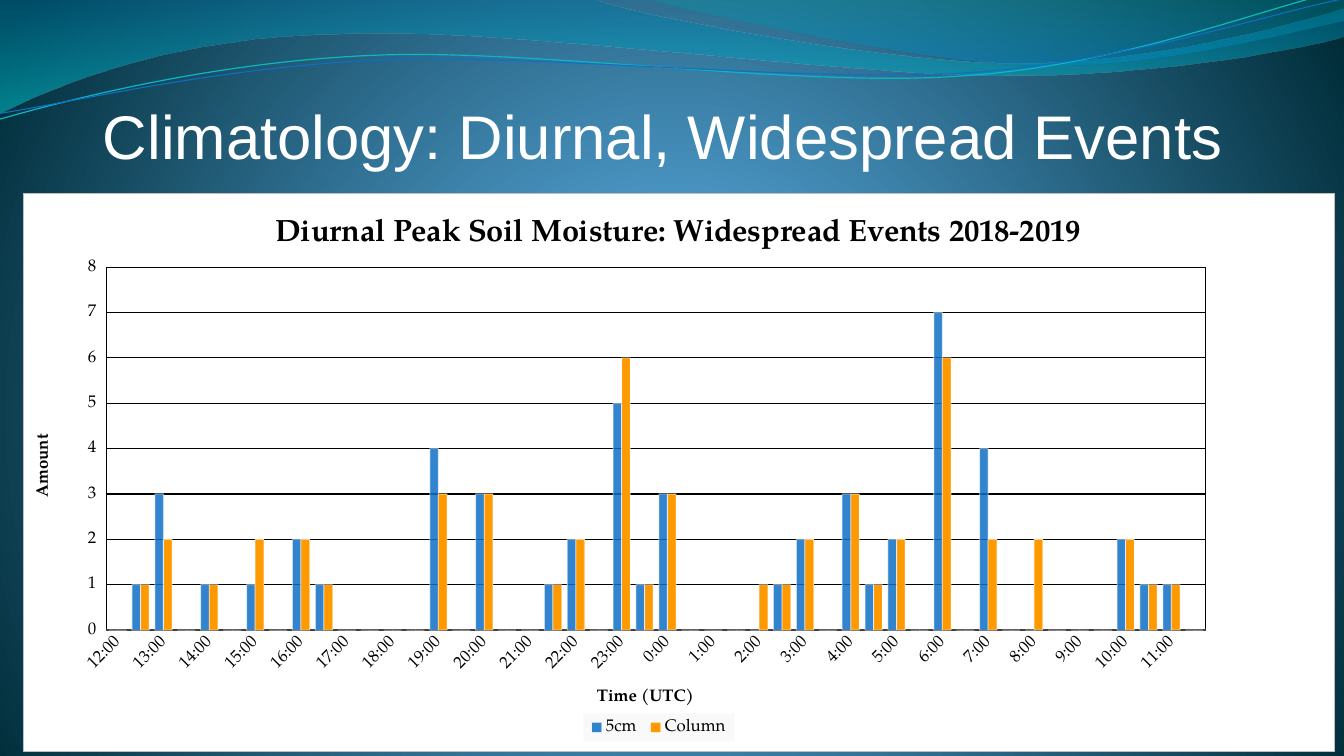
from dataclasses import dataclass
from typing import Optional

from lxml.etree import SubElement
from pptx import Presentation
from pptx.chart.data import CategoryChartData
from pptx.dml.color import RGBColor
from pptx.enum.chart import XL_CHART_TYPE as ChartType, XL_LEGEND_POSITION as LegendPosition
from pptx.enum.chart import XL_TICK_MARK as TickMark
from pptx.enum.text import MSO_ANCHOR as Anchor, PP_ALIGN as Align
from pptx.oxml import parse_xml
from pptx.oxml.ns import nsdecls, qn
from pptx.util import Inches, Pt


@dataclass(frozen=True)
class Theme:
    heading_font: str = "Arial"
    chart_font: str = "TeX Gyre Pagella"
    white: str = "FFFFFF"
    black: str = "000000"
    axis: str = "404040"
    border: str = "BFBFBF"
    legend: str = "F9F9F9"
    heading_size: float = 44
    chart_title_size: float = 22
    label_size: float = 12
    background: tuple = ((0, "4AA0D6", 100), (25, "4C98C7", 100), (100, "002C38", 100))


@dataclass(frozen=True)
class Wave:
    frame: tuple
    start: tuple
    segments: tuple
    gradient: Optional[tuple] = None
    line: Optional[str] = None
    width: float = 0


@dataclass(frozen=True)
class Series:
    name: str
    values: tuple
    color: str
    opacity: int


THEME = Theme()
WAVES = (
    Wave((-0.01, -0.01, 13.36, 1.14), (0, 0),
         ((5.87, -0.01), (6.34, 0.17, 8.85, 0.63, 10.11, 0.63),
          (11.38, 0.63, 12.78, 0.26, 13.33, 0.09), (13.35, 0.36),
          (13.11, 0.44, 11.6, 0.76, 9.94, 0.75), (8.29, 0.75, 5.09, 0.28, 3.43, 0.34),
          (1.72, 0.36, 0.61, 0.83, -0.01, 1.13), (0, 0)),
         gradient=((0, "0074A1", 45), (100, "00C6CF", 55))),
    Wave((6.39, -0.01, 6.94, 0.7), (6.39, -0.01),
         ((6.79, 0.11, 9.09, 0.62, 10.25, 0.65), (11.41, 0.69, 12.82, 0.32, 13.33, 0.21),
          (13.33, 0), (6.39, -0.01)), gradient=((0, "00A1A9", 30), (80, "008BBF", 45))),
    Wave((-0.03, 0.22, 13.36, 0.71), (-0.03, 0.87),
         ((0.61, 0.72, 2.1, 0.4, 3.69, 0.41), (5.27, 0.41, 7.88, 0.93, 9.49, 0.89),
          (11.09, 0.87, 12.54, 0.36, 13.33, 0.22)), line="0AB8BF", width=0.85),
    Wave((-0.02, 0.3, 13.38, 0.58), (-0.02, 0.81),
         ((0.61, 0.75, 2.17, 0.45, 3.77, 0.46), (5.36, 0.47, 7.94, 0.88, 9.54, 0.86),
          (11.14, 0.84, 12.56, 0.42, 13.36, 0.3)), line="0F6FC6", width=0.75),
)
TIMES = [(24 + step) % 48 / 48 for step in range(48)]
SERIES = (
    Series("5cm", (0, 1, 3, 0, 1, 0, 1, 0, 2, 1, 0, 0, 0, 0, 4, 0, 3, 0, 0, 1, 2, 0, 5, 1,
                   3, 0, 0, 0, 0, 1, 2, 0, 3, 1, 2, 0, 7, 0, 4, 0, 0, 0, 0, 0, 2, 1, 1, 0),
           "0F6FC6", 85),
    Series("Column", (0, 1, 2, 0, 1, 0, 2, 0, 2, 1, 0, 0, 0, 0, 3, 0, 3, 0, 0, 1, 2, 0, 6, 1,
                      3, 0, 0, 0, 1, 1, 2, 0, 3, 1, 2, 0, 6, 0, 2, 0, 2, 0, 0, 0, 2, 1, 1, 0),
           "FF9900", 100),
)


def apply_gradient(properties, stops: tuple, direction: str) -> None:
    marks = "".join(f'<a:gs pos="{place * 1000}"><a:srgbClr val="{color}">'
                    f'<a:alpha val="{opacity * 1000}"/></a:srgbClr></a:gs>'
                    for place, color, opacity in stops)
    properties.replace(properties.find(qn("a:solidFill")), parse_xml(
        f'<a:gradFill {nsdecls("a")} rotWithShape="1"><a:gsLst>{marks}</a:gsLst>'
        f'{direction}</a:gradFill>'))


def set_opacity(parent, opacity: int) -> None:
    color = parent.find(f'{qn("a:solidFill")}/{qn("a:srgbClr")}')
    SubElement(color, qn("a:alpha")).set("val", str(opacity * 1000))


def style_line(line, color: str, width: float) -> None:
    line.color.rgb = RGBColor.from_string(color)
    line.width = Pt(width)


def draw_wave(page, wave: Wave) -> None:
    left, top, width, height = (Inches(value) for value in wave.frame)
    builder = page.shapes.build_freeform(*(Inches(value) for value in wave.start))
    builder.add_line_segments([tuple(Inches(v) for v in part[-2:]) for part in wave.segments],
                              close=wave.line is None)
    shape = builder.convert_to_shape()
    shape.left, shape.top, shape.width, shape.height = left, top, width, height
    shape.shadow.inherit = False
    outline = shape._element.spPr.find(f'{qn("a:custGeom")}/{qn("a:pathLst")}')[0]
    outline.set("w", str(width))
    outline.set("h", str(height))
    for command, part in zip(outline, (wave.start, *wave.segments)):
        if len(part) == 6:
            command.tag = qn("a:cubicBezTo")
        for point in list(command):
            command.remove(point)
        for x, y in zip(part[::2], part[1::2]):
            point = SubElement(command, qn("a:pt"))
            point.set("x", str(Inches(x) - left))
            point.set("y", str(Inches(y) - top))
    if wave.line:
        shape.rotation = 357.3
        shape.fill.background()
        style_line(shape.line, wave.line, wave.width)
    else:
        shape.line.fill.background()
        shape.fill.solid()
        apply_gradient(shape._element.spPr, wave.gradient, '<a:lin ang="5400000" scaled="0"/>')


def format_font(font, *, size: float, color: str = THEME.black,
                name: str = THEME.chart_font, bold: bool = False) -> None:
    font.name, font.size, font.bold = name, Pt(size), bold
    font.color.rgb = RGBColor.from_string(color)


def write_text(frame, text: str, **style) -> None:
    span = frame.paragraphs[0].add_run()
    span.text = text
    format_font(span.font, **style)


def set_layout(parent, index: int, target: str = "", **place: float) -> None:
    for old in parent.findall(qn("c:layout")):
        parent.remove(old)
    sizes = "".join(f'<c:{key} val="{value}"/>' for key, value in place.items())
    parent.insert(index, parse_xml(
        f'<c:layout {nsdecls("c")}><c:manualLayout>{target}<c:xMode val="edge"/>'
        f'<c:yMode val="edge"/>{sizes}</c:manualLayout></c:layout>'))


def frame_xml(fill: Optional[str], line: Optional[str]):
    inside, edge = (f'<a:solidFill><a:srgbClr val="{color}"/></a:solidFill>' if color
                    else "<a:noFill/>" for color in (fill, line))
    return parse_xml(f'<c:spPr {nsdecls("c", "a")}>{inside}<a:ln w="9525">{edge}</a:ln></c:spPr>')


def add_title(holder, text: str, size: float, x: float, y: float) -> None:
    write_text(holder.text_frame, text, size=size, bold=True)
    set_layout(holder._element, 1, x=x, y=y)


def style_axes(chart) -> None:
    hours, amounts = chart.category_axis, chart.value_axis
    for axis, pattern in ((hours, "h:mm"), (amounts, "0")):
        format_font(axis.tick_labels.font, size=THEME.label_size)
        axis.tick_labels.number_format = pattern
        axis.tick_labels.number_format_is_linked = False
    add_title(hours.axis_title, "Time (UTC)", THEME.label_size, 0.435, 0.88)
    add_title(amounts.axis_title, "Amount", THEME.label_size, 0.005, 0.427)
    hours.major_tick_mark = TickMark.NONE
    style_line(hours.format.line, THEME.axis, 1.5)
    element = hours._element
    element.find(f'{qn("c:txPr")}/{qn("a:bodyPr")}').set("rot", "-2700000")
    element.find(qn("c:noMultiLvlLbl")).addprevious(
        parse_xml(f'<c:tickLblSkip {nsdecls("c")} val="2"/>'))
    amounts.minimum_scale, amounts.maximum_scale, amounts.major_unit = 0, 8, 1
    amounts.major_tick_mark = TickMark.OUTSIDE
    amounts.format.line.fill.background()
    style_line(amounts.major_gridlines.format.line, THEME.black, 0.75)


def add_moisture_chart(page) -> None:
    data = CategoryChartData(number_format="0")
    data.categories = TIMES
    data.categories.number_format = "h:mm"
    for series in SERIES:
        data.add_series(series.name, series.values)
    chart = page.shapes.add_chart(ChartType.COLUMN_CLUSTERED, Inches(0.23), Inches(1.91),
                                  Inches(13.01), Inches(5.55), data).chart
    format_font(chart.font, size=10, color=THEME.white)
    add_title(chart.chart_title, "Diurnal Peak Soil Moisture: Widespread Events 2018-2019",
              THEME.chart_title_size, 0.188, 0.03)
    style_axes(chart)
    plot = chart.plots[0]
    plot.gap_width, plot.overlap, plot.vary_by_categories = 65, 0, False
    for bars, series in zip(plot.series, SERIES):
        bars.format.fill.solid()
        bars.format.fill.fore_color.rgb = RGBColor.from_string(series.color)
        style_line(bars.format.line, THEME.white, 0.75)
        set_opacity(bars._element.spPr, series.opacity)
        set_opacity(bars._element.spPr.find(qn("a:ln")), 50)
    chart.has_legend = True
    legend = chart.legend
    legend.position, legend.include_in_layout = LegendPosition.BOTTOM, False
    format_font(legend.font, size=THEME.label_size)
    set_layout(legend._element, 1, x=0.427, y=0.932, w=0.115, h=0.05)
    legend._element.find(qn("c:txPr")).addprevious(frame_xml(THEME.legend, None))
    body = chart._chartSpace.chart
    set_layout(body.plotArea, 0, '<c:layoutTarget val="inner"/>', x=0.063, y=0.133, w=0.839, h=0.65)
    body.plotArea.append(frame_xml(None, THEME.black))
    body.addnext(frame_xml(THEME.white, THEME.border))


deck = Presentation()
deck.slide_width, deck.slide_height = Inches(13.33), Inches(7.5)
page = deck.slides.add_slide(deck.slide_layouts[5])
page.background.fill.solid()
apply_gradient(page.background._cSld.bg.bgPr, THEME.background, '<a:path path="circle">'
               '<a:fillToRect l="10000" t="110000" r="10000" b="100000"/></a:path>')
for wave in WAVES:
    draw_wave(page, wave)
box = page.shapes.title
box.left, box.top, box.width, box.height = (Inches(v) for v in (0.92, 0.92, 11.5, 1.45))
box.text_frame.vertical_anchor = Anchor.TOP
box.text_frame.paragraphs[0].alignment = Align.LEFT
write_text(box.text_frame, "Climatology: Diurnal, Widespread Events",
           size=THEME.heading_size, color=THEME.white, name=THEME.heading_font)
add_moisture_chart(page)
deck.save("out.pptx")
